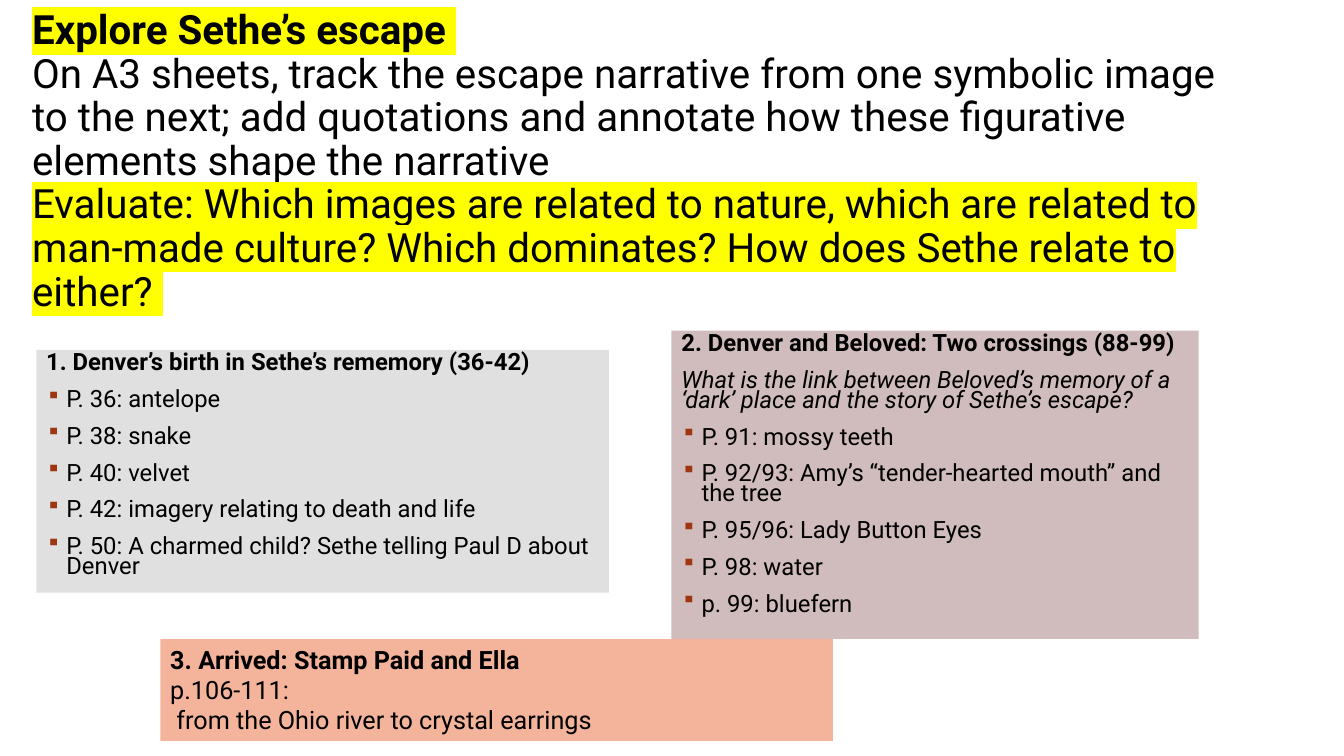
import pptx
import pptx.util
import pptx.dml.color
import pptx.enum.text
import pptx.oxml
import pptx.oxml.ns
from pptx.util import Inches

BLACK = pptx.dml.color.RGBColor(0x00, 0x00, 0x00)
GREY = pptx.dml.color.RGBColor(0xE1, 0xE0, 0xE0)
MAUVE = pptx.dml.color.RGBColor(0xD0, 0xBC, 0xBC)
SALMON = pptx.dml.color.RGBColor(0xF4, 0xB3, 0x9B)
YELLOW = pptx.dml.color.RGBColor(0xFF, 0xFF, 0x00)
RUST = pptx.dml.color.RGBColor(0x9E, 0x36, 0x11)
NAMESPACE = pptx.oxml.ns.nsdecls("a")


def add_box(left, top, width, height):
    box = slide.shapes.add_textbox(Inches(left), Inches(top), Inches(width), Inches(height))
    box.text_frame.word_wrap = True
    box.text_frame.vertical_anchor = pptx.enum.text.MSO_ANCHOR.TOP
    return box


def set_font(paragraph, size, bold=False, italic=False):
    paragraph.font.name = "Roboto"
    paragraph.font.size = pptx.util.Pt(size)
    paragraph.font.bold = bold
    paragraph.font.italic = italic
    paragraph.font.color.rgb = BLACK


presentation = pptx.Presentation()
presentation.slide_width = Inches(13.33)
presentation.slide_height = Inches(7.5)
slide = presentation.slides.add_slide(presentation.slide_layouts[6])

task = add_box(0.22, 0.05, 11.95, 3.4).text_frame.paragraphs[0]
task.line_spacing = 0.9
set_font(task, 28.8)
instructions = [
    ("Explore Sethe’s escape ", True, True),
    ("On A3 sheets, track the escape narrative from one symbolic image to the next; "
     "add quotations and annotate how these figurative elements shape the narrative ", False, False),
    ("Evaluate: Which images are related to nature, which are related to man-made culture? "
     "Which dominates? How does Sethe relate to either? ", False, True),
]
for index, (wording, bold, highlighted) in enumerate(instructions):
    if index:
        task.add_line_break()
    run = task.add_run()
    run.text = wording
    run.font.bold = bold
    if highlighted:
        run.font._element.append(pptx.oxml.parse_xml(
            f'<a:highlight {NAMESPACE}><a:srgbClr val="{YELLOW}"/></a:highlight>'))

sections = [
    ((0.36, 3.47, 5.68, 2.41), GREY, 17, 0.7, 12, [
        ("heading", "1. Denver’s birth in Sethe’s rememory (36-42)"),
        ("bullet", "P. 36: antelope"),
        ("bullet", "P. 38: snake"),
        ("bullet", "P. 40: velvet"),
        ("bullet", "P. 42: imagery relating to death and life"),
        ("bullet", "P. 50: A charmed child? Sethe telling Paul D about Denver"),
    ]),
    ((6.66, 3.28, 5.23, 3.06), MAUVE, 17, 0.7, 12, [
        ("heading", "2. Denver and Beloved: Two crossings (88-99)"),
        ("question", "What is the link between Beloved’s memory of a ‘dark’ place "
                     "and the story of Sethe’s escape?"),
        ("bullet", "P. 91: mossy teeth"),
        ("bullet", "P. 92/93: Amy’s “tender-hearted mouth” and the tree"),
        ("bullet", "P. 95/96: Lady Button Eyes"),
        ("bullet", "P. 98: water"),
        ("bullet", "p. 99: bluefern"),
    ]),
    ((1.59, 6.34, 6.67, 1.01), SALMON, 18, 1.0, 0, [
        ("heading", "3. Arrived: Stamp Paid and Ella"),
        ("plain", "p.106-111:"),
        ("plain", " from the Ohio river to crystal earrings"),
    ]),
]
for position, colour, size, line_spacing, gap, entries in sections:
    section = add_box(*position)
    section.fill.solid()
    section.fill.fore_color.rgb = colour
    for index, (role, wording) in enumerate(entries):
        frame = section.text_frame
        entry = frame.add_paragraph() if index else frame.paragraphs[0]
        entry.text = wording
        entry.line_spacing = line_spacing
        if index:
            entry.space_before = pptx.util.Pt(gap)
        if role == "bullet":
            properties = entry._p.get_or_add_pPr()
            properties.set("marL", str(Inches(0.2)))
            properties.set("indent", str(Inches(-0.2)))
            for bullet_part in (
                f'<a:buClr {NAMESPACE}><a:srgbClr val="{RUST}"/></a:buClr>',
                f'<a:buSzPct {NAMESPACE} val="85000"/>',
                f'<a:buChar {NAMESPACE} char="▪"/>',
            ):
                properties.append(pptx.oxml.parse_xml(bullet_part))
        set_font(entry, size, role == "heading", role == "question")

presentation.save("out.pptx")
